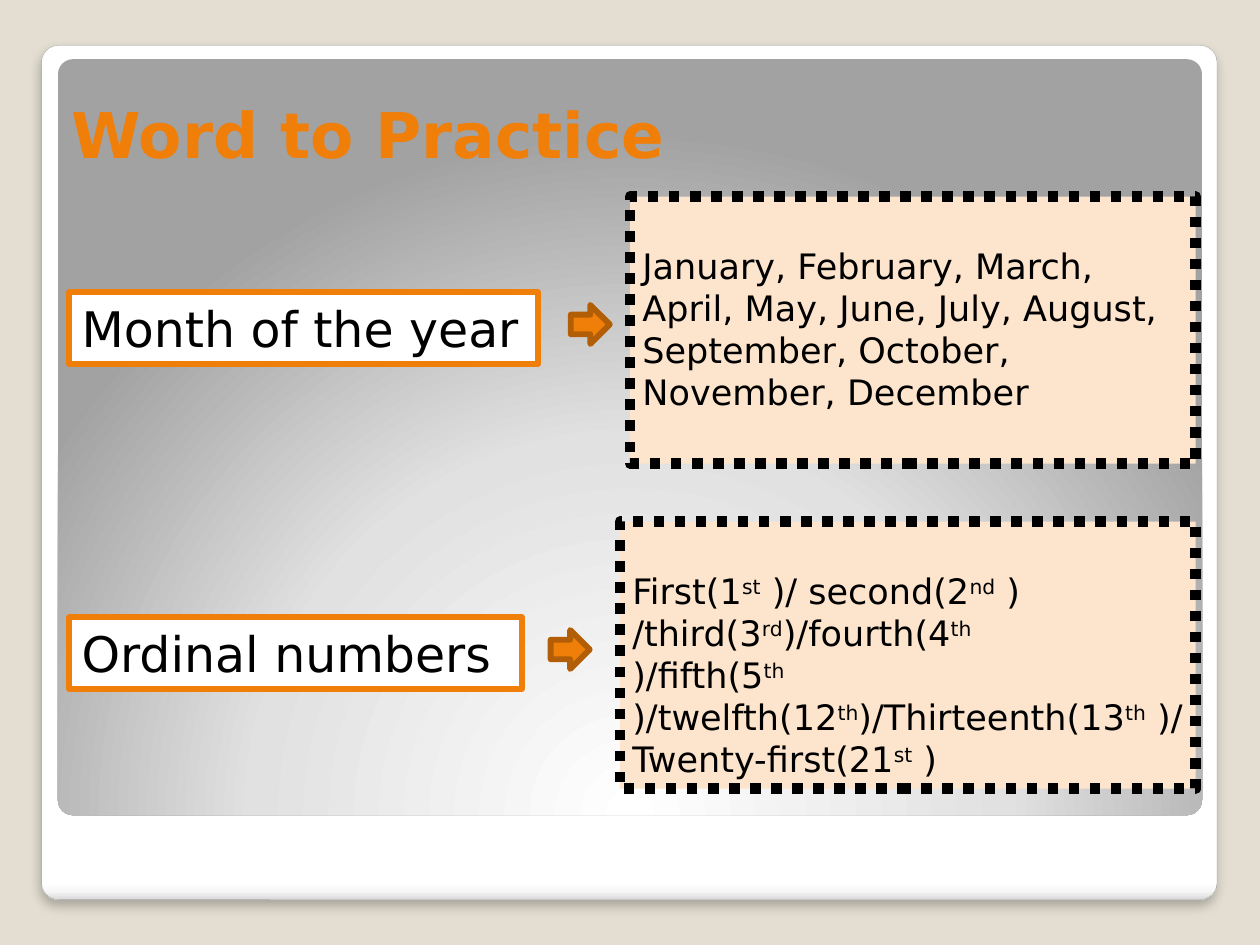
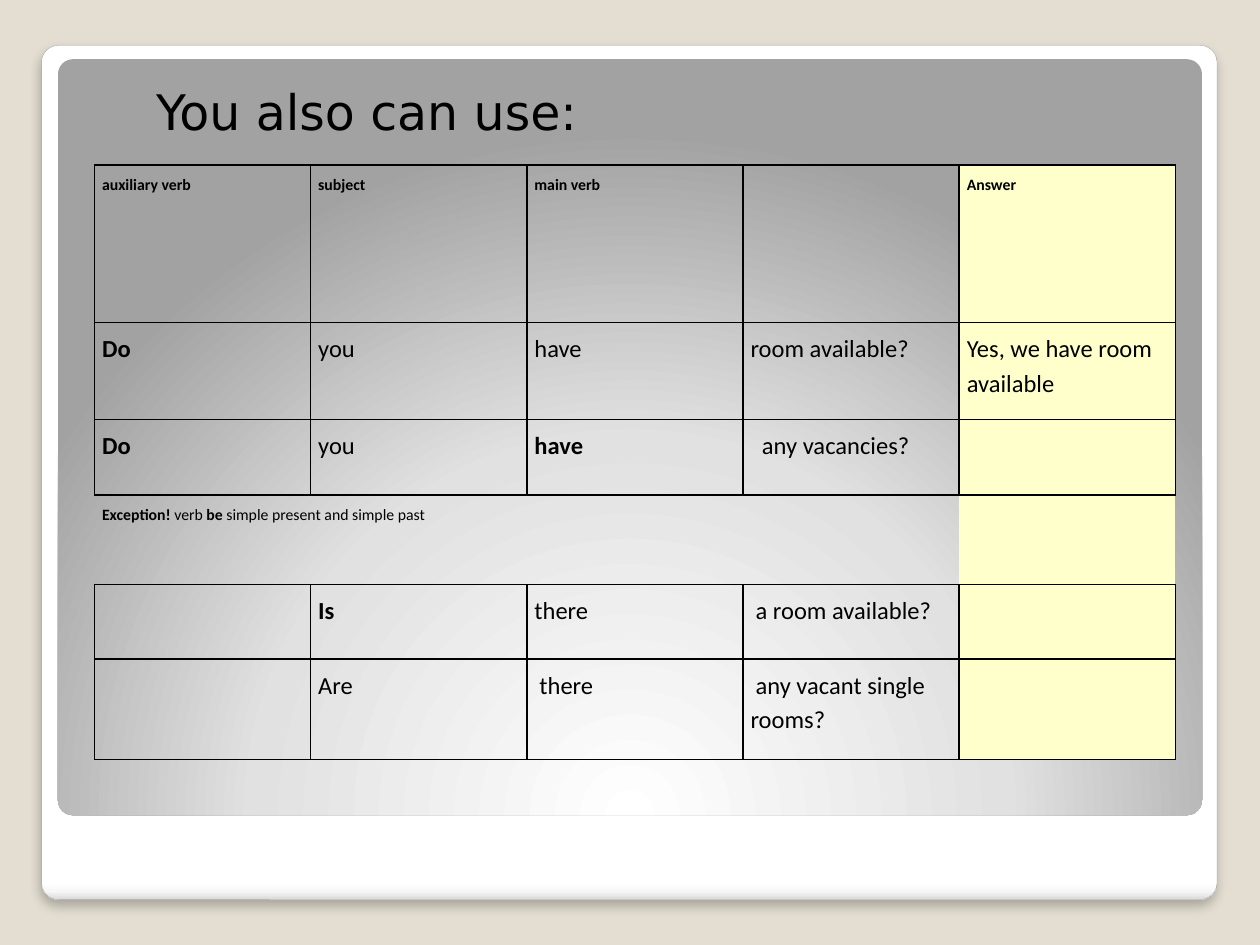
from lxml import etree
from pptx import Presentation
from pptx.dml.color import RGBColor
from pptx.enum.dml import MSO_LINE
from pptx.enum.shapes import MSO_SHAPE
from pptx.enum.text import MSO_ANCHOR, PP_ALIGN
from pptx.oxml import parse_xml
from pptx.oxml.ns import qn
from pptx.util import Pt

ROUND, RECT, ARROW = (MSO_SHAPE.ROUNDED_RECTANGLE, MSO_SHAPE.RECTANGLE,
                      MSO_SHAPE.RIGHT_ARROW)
TOP, BOTTOM = MSO_ANCHOR.TOP, MSO_ANCHOR.BOTTOM
LEFT, DOTS = PP_ALIGN.LEFT, MSO_LINE.ROUND_DOT

SCALE = 9144  # EMU in one px, at 100 px to the inch
SANS, BODY = "DejaVu Sans", "Calibri"
NS = 'xmlns:a="http://schemas.openxmlformats.org/drawingml/2006/main"'
HEX = {
    "back": "E3DED1", "white": "FFFFFF", "edge": "A4A4A4", "ink": "000000",
    "orange": "F07F09", "rust": "B25E07", "peach": "FDE5CD",
    "cream": "FFFFCC", "mist": "F7F7F7", "rim": "DADADA",
    "pale": "E1E1E1", "gray": "A2A2A2",
}
SHEET, PANEL = (33, 36, 933, 678), (46, 47, 908, 600)

# A bar switches the special style (superscript or bold) on and off.
MONTHS = ("January, February, March, April, May, June, July, August, "
          "September, October, November, December")
RANKS = ("First(1|st| )/ second(2|nd| ) /third(3|rd|)/fourth(4|th| )/fifth(5"
         "|th| )/twelfth(12|th|)/Thirteenth(13|th| )/Twenty-first(21|st| )")
# label text, label box, arrow box, list text, list box
PAIRS = [
    ("Month of the year", (55, 232, 372, 57), (453, 242, 31, 31),
     MONTHS, (500, 156, 449, 212)),
    ("Ordinal numbers", (55, 490, 359, 57), (437, 500, 31, 31),
     RANKS, (492, 414, 457, 212)),
]
GRID = [
    ["|auxiliary verb|", "|subject|", "|main verb|", "", "|Answer|"],
    ["|Do|", "you", "have", "room available?", "Yes, we have room available"],
    ["|Do|", "you", "|have|", "any vacancies?", ""],
    ["|Exception!| verb |be| simple present and simple past", "", "", "", ""],
    ["", "|Is|", "there", "a room available?", ""],
    ["", "Are", "there", "any vacant single rooms?", ""],
]
ROWS = [125, 77, 60, 71, 59, 80]
SMALL, NOTE = (0, 3), 3  # rows in small type; row of the exception
LEADS = {(2, 3): 9, (4, 3): 4, (5, 2): 4, (5, 3): 4}  # first-line indents


def emu(*sizes):
    return [round(size * SCALE) for size in sizes]


def rgb(name):
    return RGBColor.from_string(HEX[name])


def write(para, text, size, font=SANS, color="ink", bold=False, mark=None):
    """Add runs, giving every second part between bars the marked style."""
    for i, part in enumerate(text.split("|")):
        if not part:
            continue
        run = para.add_run()
        run.text = part
        run.font.size, run.font.name = Pt(size), font
        run.font.color.rgb = rgb(color)
        run.font.bold = bold or (mark == "bold" and i % 2 == 1)
        if mark == "super" and i % 2:
            run._r.get_or_add_rPr().set("baseline", "30000")


def label(shape, text, size, anchor=TOP, top=5, low=5, **style):
    frame = shape.text_frame
    frame.word_wrap, frame.vertical_anchor = True, anchor
    frame.margin_top, frame.margin_bottom = emu(top, low)
    para = frame.paragraphs[0]
    para.alignment = LEFT
    write(para, text, size, **style)


def draw(slide, kind, box, fill=None, line=None, width=1):
    shape = slide.shapes.add_shape(kind, *emu(*box))
    shape.shadow.inherit = False
    if fill:
        shape.fill.solid()
        shape.fill.fore_color.rgb = rgb(fill)
    if line:
        shape.line.color.rgb = rgb(line)
        shape.line.width = Pt(width)
    else:
        shape.line.fill.background()
    return shape


def blend(shape, stops, shade):
    """Give the shape a gradient fill; shade is the XML of its direction."""
    marks = "".join(f'<a:gs pos="{at * 1000}"><a:srgbClr val="{HEX[name]}"/>'
                    "</a:gs>" for at, name in stops)
    fill = parse_xml(f'<a:gradFill {NS} rotWithShape="1"><a:gsLst>{marks}'
                     f"</a:gsLst>{shade}</a:gradFill>")
    shape._element.spPr.find(qn("a:prstGeom")).addnext(fill)


def cast(shape):
    """Add a soft shadow straight below the shape."""
    glow = parse_xml(
        f'<a:outerShdw {NS} blurRad="76200" dist="50800" dir="5400000" '
        f'algn="tl" rotWithShape="0"><a:srgbClr val="{HEX["ink"]}">'
        '<a:alpha val="25000"/></a:srgbClr></a:outerShdw>')
    shape._element.spPr.find(qn("a:effectLst")).append(glow)


def start(deck):
    """Add a slide with the shared background, sheet and panel."""
    slide = deck.slides.add_slide(deck.slide_layouts[6])
    slide.background.fill.solid()
    slide.background.fill.fore_color.rgb = rgb("back")
    sheet = draw(slide, ROUND, SHEET, line="edge", width=0.16)
    blend(sheet, [(0, "white"), (98, "white"), (99, "mist"), (100, "rim")],
          '<a:lin ang="5400000" scaled="0"/>')
    cast(sheet)
    panel = draw(slide, ROUND, PANEL)
    blend(panel, [(0, "white"), (55, "pale"), (100, "gray")],
          '<a:path path="circle"><a:fillToRect l="50000" t="175000" '
          'r="50000" b="-75000"/></a:path>')
    for shape in (sheet, panel):
        shape.adjustments[0] = 0.02
    return slide


def head(slide, box, text, size, **style):
    label(slide.shapes.add_textbox(*emu(*box)), text, size, **style)


def pair(slide, name, tag, arrow, words, box):
    label(draw(slide, RECT, tag, "white", "orange", 3.35), name, 28)
    draw(slide, ARROW, arrow, "orange", "rust", 3.35)
    card = draw(slide, RECT, box, "peach", "ink", 6)
    card.line.dash_style = DOTS
    label(card, words, 20, top=38, mark="super")


def rule(cell, sides):
    """Draw black borders on the named sides and clear the others."""
    props = cell._tc.get_or_add_tcPr()
    for i, side in enumerate("LRTB"):
        line = etree.Element(qn(f"a:ln{side}"), w=str(Pt(1)))
        if side in sides:
            fill = etree.SubElement(line, qn("a:solidFill"))
            etree.SubElement(fill, qn("a:srgbClr"), val=HEX["ink"])
        else:
            etree.SubElement(line, qn("a:noFill"))
        props.insert(i, line)


def fill_cell(cell, text, size, lead):
    cell.margin_left = cell.margin_right = emu(6)[0]
    cell.margin_top = cell.margin_bottom = emu(6)[0]
    para = cell.text_frame.paragraphs[0]
    para.line_spacing, para.space_after = 1.15, Pt(10)
    if lead:
        props = para._p.get_or_add_pPr()
        props.set("marL", "0")
        props.set("indent", str(emu(lead)[0]))
    write(para, text, size, BODY, mark="bold")


def grid(slide, box):
    count = len(GRID[0])
    table = slide.shapes.add_table(len(GRID), count, *emu(*box)).table
    table.first_row = table.horz_banding = False
    for col in table.columns:
        col.width = emu(box[2] / count)[0]
    for r, texts in enumerate(GRID):
        table.rows[r].height = emu(ROWS[r])[0]
        for c, text in enumerate(texts):
            cell = table.cell(r, c)
            if c == count - 1:
                cell.fill.solid()
                cell.fill.fore_color.rgb = rgb("cream")
            else:
                cell.fill.background()
            rule(cell, "TB" if r == NOTE else "LRTB")
            if text:
                fill_cell(cell, text, 9 if r in SMALL else 14,
                          LEADS.get((r, c)))
    table.cell(NOTE, 0).merge(table.cell(NOTE, count - 2))


def words_slide(deck):
    slide = start(deck)
    head(slide, (47, 23, 895, 115), "Word to Practice", 36, anchor=BOTTOM,
         low=2, color="orange", bold=True)
    for item in PAIRS:
        pair(slide, *item)


def verbs_slide(deck):
    slide = start(deck)
    head(slide, (114, 60, 380, 57), "You also can use:", 28)
    grid(slide, (75, 131, 858, sum(ROWS)))


def main():
    deck = Presentation()
    deck.slide_width, deck.slide_height = emu(1000, 750)
    words_slide(deck)
    verbs_slide(deck)
    deck.save("out.pptx")


if __name__ == "__main__":
    main()
